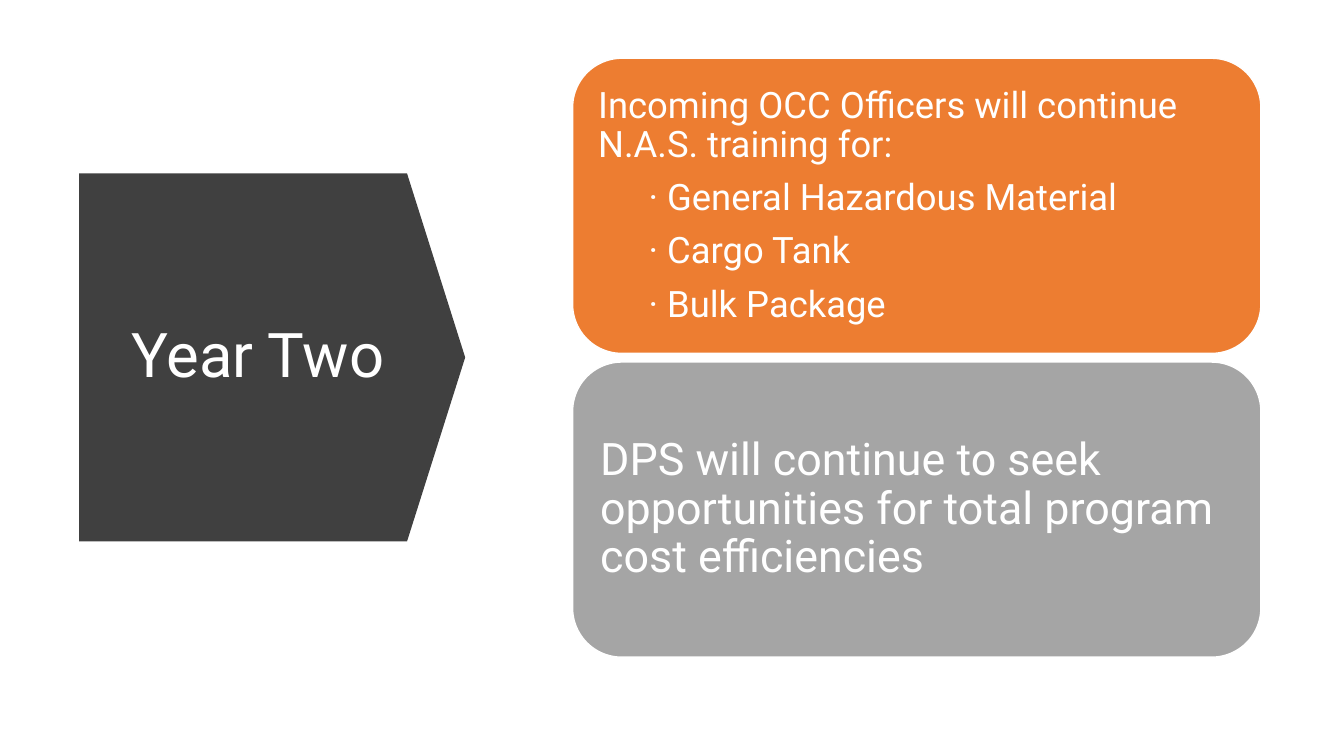
from pptx import Presentation
from pptx.dml.color import RGBColor
from pptx.enum.shapes import MSO_SHAPE
from pptx.enum.text import MSO_ANCHOR, PP_ALIGN
from pptx.util import Pt

COLORS = {"white": "FFFFFF", "dark": "404040", "orange": "ED7D31", "gray": "A5A5A5"}


def paint(shape, fill):
    shape.shadow.inherit = False
    shape.fill.solid()
    shape.fill.fore_color.rgb = RGBColor.from_string(COLORS[fill])


def write(paragraph, text, size, align):
    paragraph.text = text
    paragraph.alignment = align
    paragraph.line_spacing = 0.9
    paragraph.font.name = "Roboto"
    paragraph.font.size = Pt(size)
    paragraph.font.color.rgb = RGBColor.from_string(COLORS["white"])


prs = Presentation()
prs.slide_width, prs.slide_height = Pt(960), Pt(540)
slide = prs.slides.add_slide(prs.slide_layouts[5])

year_title = slide.shapes.title
year_title.left, year_title.top = Pt(80.6), Pt(154.8)
year_title.width, year_title.height = Pt(207.4), Pt(200.9)
year_title.text_frame.vertical_anchor = MSO_ANCHOR.MIDDLE
write(year_title.text_frame.paragraphs[0], "Year Two", 44, PP_ALIGN.CENTER)

year_arrow = slide.shapes.add_shape(
    MSO_SHAPE.PENTAGON, Pt(56.5), Pt(123.9), Pt(275.8), Pt(262.8))
year_arrow.adjustments[0] = 0.158
paint(year_arrow, "dark")
year_arrow.line.fill.background()
year_title.element.addprevious(year_arrow.element)

plans = [
    ("orange", 26, 8, [
        ("Incoming OCC Officers will continue N.A.S. training for:", 0),
        ("· General Hazardous Material", 36),
        ("· Cargo Tank", 36),
        ("· Bulk Package", 36),
    ]),
    ("gray", 32, 9.4, [
        ("DPS will continue to seek opportunities for total program cost efficiencies", 0),
    ]),
]

for row, (fill, size, inset, lines) in enumerate(plans):
    card = slide.shapes.add_shape(
        MSO_SHAPE.ROUNDED_RECTANGLE, Pt(409), Pt(41.6 + 217 * row), Pt(491.6), Pt(210.8))
    paint(card, fill)
    card.line.color.rgb = RGBColor.from_string(COLORS["white"])
    card.line.width = Pt(1)
    frame = card.text_frame
    frame.word_wrap = True
    frame.vertical_anchor = MSO_ANCHOR.MIDDLE
    frame.margin_left = frame.margin_right = Pt(inset)
    frame.margin_top = frame.margin_bottom = Pt(inset)
    for index, (text, indent) in enumerate(lines):
        paragraph = frame.add_paragraph() if index else frame.paragraphs[0]
        write(paragraph, text, size, PP_ALIGN.LEFT)
        paragraph.space_after = Pt(10)
        if indent:
            paragraph._p.get_or_add_pPr().set("marL", str(Pt(indent)))

prs.save("out.pptx")
